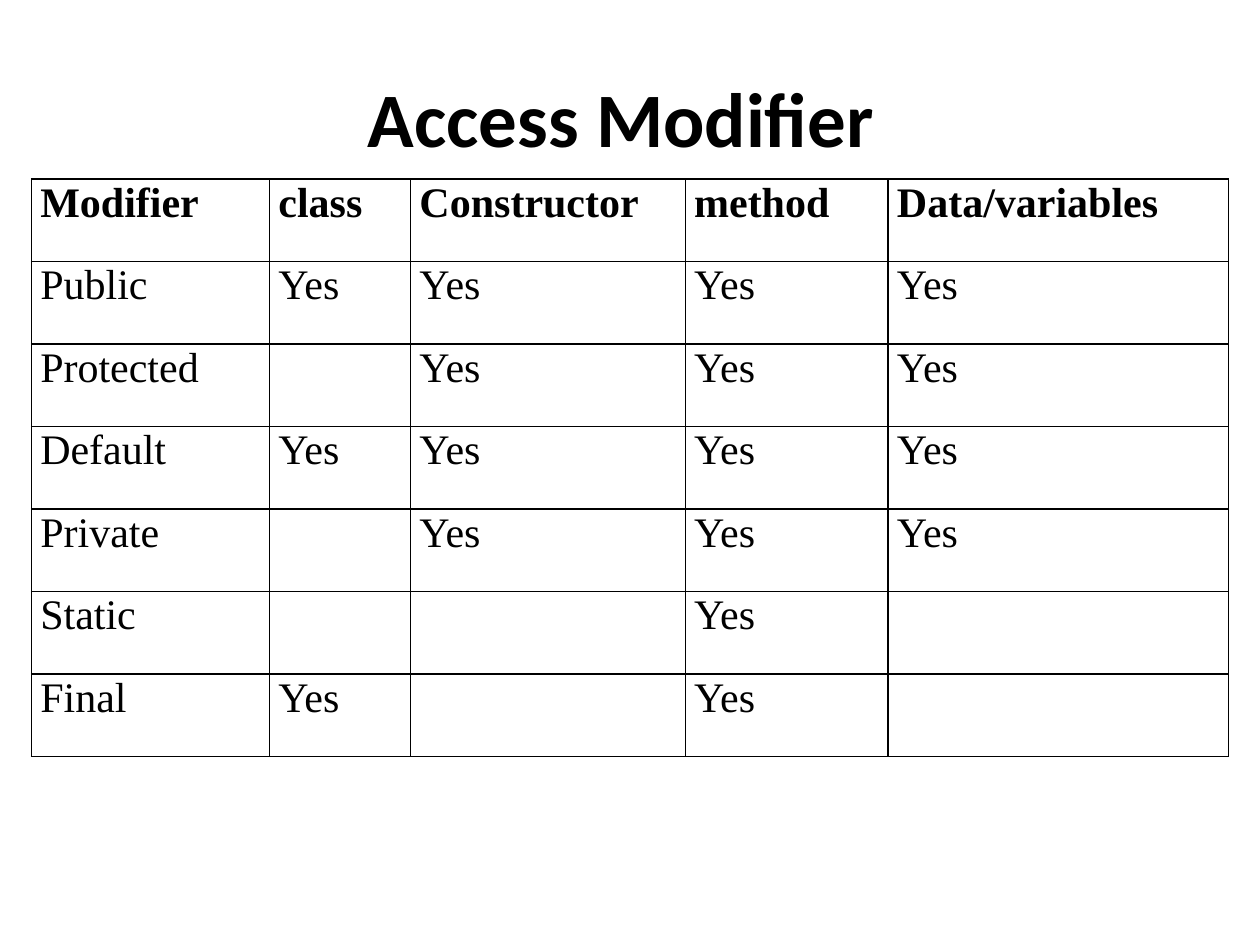
import pptx
import pptx.dml.color
import pptx.enum.text
import pptx.oxml.ns
import pptx.util
from lxml import etree
from pptx.util import Inches

BLACK = pptx.dml.color.RGBColor(0, 0, 0)
HEADS = ["Modifier", "class", "Constructor", "method", "Data/variables"]
# Each modifier with the columns it applies to
USES = {
    "Public": HEADS[1:],
    "Protected": HEADS[2:],
    "Default": HEADS[1:],
    "Private": HEADS[2:],
    "Static": ["method"],
    "Final": ["class", "method"],
}
WIDTHS = [1.89, 1.12, 2.18, 1.61, 2.7]
ROW = 0.655
LINE = pptx.util.Pt(13.5)


def style_text(par, font, size, bold):
    for run in par.runs:
        run.font.name = font
        run.font.size = pptx.util.Pt(size)
        run.font.bold = bold
        run.font.color.rgb = BLACK


def add_title(slide, text):
    title = slide.shapes.title
    title.left, title.top = Inches(0.5), Inches(0.3)
    title.width, title.height = Inches(9), Inches(1.25)
    frame = title.text_frame
    frame.text = text
    frame.vertical_anchor = pptx.enum.text.MSO_ANCHOR.MIDDLE
    par = frame.paragraphs[0]
    par.alignment = pptx.enum.text.PP_ALIGN.CENTER
    style_text(par, "Calibri", 44, True)


def add_edges(cell):
    """Draw a thin black line on all four sides of a cell."""
    props = cell._tc.get_or_add_tcPr()
    tag = pptx.oxml.ns.qn
    for spot, side in enumerate(["a:lnL", "a:lnR", "a:lnT", "a:lnB"]):
        line = etree.Element(tag(side), w=str(pptx.util.Pt(1)))
        fill = etree.SubElement(line, tag("a:solidFill"))
        etree.SubElement(fill, tag("a:srgbClr"), val=str(BLACK))
        props.insert(spot, line)


def fill_cell(cell, text, bold):
    cell.fill.background()
    add_edges(cell)
    cell.margin_left = cell.margin_right = Inches(0.07)
    cell.margin_top, cell.margin_bottom = LINE, 0
    cell.text_frame.text = text
    par = cell.text_frame.paragraphs[0]
    par.line_spacing = LINE
    style_text(par, "Times New Roman", 24, bold)


def add_grid(slide, rows):
    frame = slide.shapes.add_table(
        len(rows), len(WIDTHS), Inches(0.25), Inches(1.42),
        Inches(sum(WIDTHS)), Inches(ROW * len(rows)))
    table = frame.table
    table.first_row = table.horz_banding = False
    for col, width in zip(table.columns, WIDTHS):
        col.width = Inches(width)
    for r, row in enumerate(rows):
        for c, text in enumerate(row):
            fill_cell(table.cell(r, c), text, r == 0)


def main():
    deck = pptx.Presentation()
    deck.slide_width, deck.slide_height = Inches(10), Inches(7.5)
    slide = deck.slides.add_slide(deck.slide_layouts[5])
    add_title(slide, "Access Modifier ")
    rows = [HEADS]
    for name, uses in USES.items():
        rows.append([name] + ["Yes" if h in uses else "" for h in HEADS[1:]])
    add_grid(slide, rows)
    deck.save("out.pptx")


if __name__ == "__main__":
    main()
